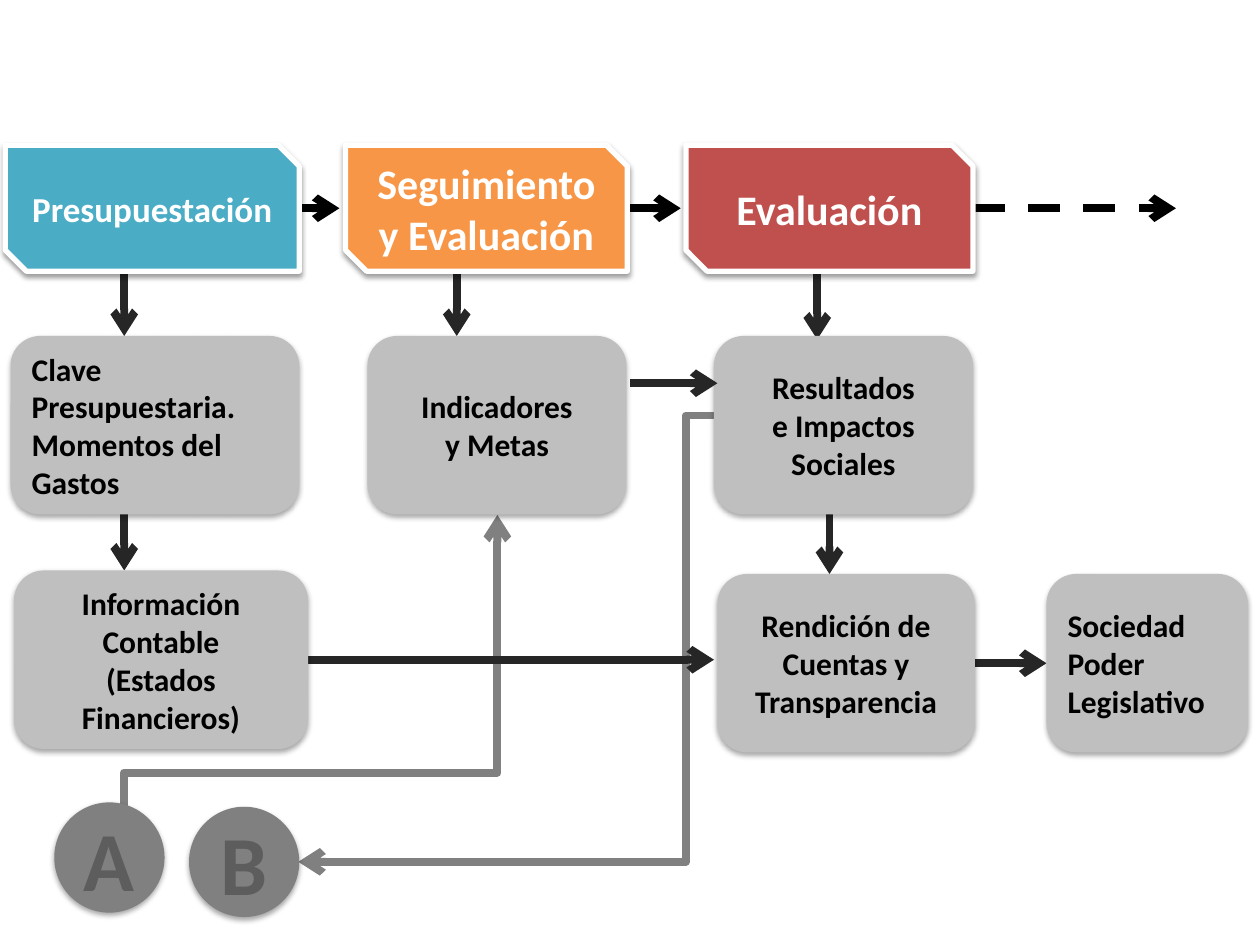
from lxml.etree import SubElement
from pptx import Presentation
from pptx.dml.color import RGBColor
from pptx.enum.dml import MSO_LINE as DASH
from pptx.enum.shapes import MSO_CONNECTOR as CONN, MSO_SHAPE as SHAPE
from pptx.enum.text import MSO_ANCHOR as ANCHOR, PP_ALIGN as ALIGN
from pptx.oxml.ns import qn
from pptx.util import Pt

COLORS = {
    "blue": "4BACC6", "orange": "F79646", "red": "C0504D", "white": "FFFFFF",
    "black": "000000", "dark": "262626", "gray": "808080", "light": "BFBFBF",
    "letter": "5D5D5D",
}

KINDS = {
    "stage": {"shape": SHAPE.SNIP_2_DIAG_RECTANGLE, "color": "white", "border": 3, "alpha": 38},
    "step": {"shape": SHAPE.ROUNDED_RECTANGLE, "color": "black", "border": 0, "alpha": 35},
    "badge": {"shape": SHAPE.OVAL, "color": "letter", "border": 0, "alpha": 35},
}
FONT = {"name": "Calibri", "bold": True}

STAGE_TOP, STAGE_H = 83, 72
STAGES = [
    (["Presupuestación"], 3, 168, "blue", 20),
    (["Seguimiento y Evaluación"], 197.5, 161, "orange", 24),
    (["Evaluación"], 392, 164, "red", 24),
]

STEP_H = 102
STEPS = {
    "key": (["Clave Presupuestaria. Momentos del Gastos"], 6, 192, 165, ALIGN.LEFT),
    "accounts": (["Información Contable", "(Estados Financieros)"], 8, 326, 168, ALIGN.CENTER),
    "goals": (["Indicadores", "y Metas"], 210, 192, 148, ALIGN.CENTER),
    "results": (["Resultados", "e Impactos Sociales"], 408, 192, 148, ALIGN.CENTER),
    "report": (["Rendición de Cuentas y Transparencia"], 410, 328, 147, ALIGN.CENTER),
    "society": (["Sociedad", "Poder Legislativo"], 598, 328, 115, ALIGN.LEFT),
}

BADGE = 63
BADGES = [("A", 31, 458.5), ("B", 108, 461)]

STAGE_MID = STAGE_TOP + STAGE_H / 2
STAGE_ARROWS = [(167, 194), (346, 389), (556, 672)]
DOWN_ARROWS = [(71, 242, 326), (474, 244, 328), (71, 107, 192), (261, 107, 192), (467, 109, 194)]


def rgb(key):
    return RGBColor.from_string(COLORS[key])


def add_arrow(kind, x1, y1, x2, y2, color):
    c = s.shapes.add_connector(kind, Pt(x1), Pt(y1), Pt(x2), Pt(y2))
    c.line.color.rgb = rgb(color)
    c.line.width = Pt(4.5)
    SubElement(c.line._get_or_add_ln(), qn("a:tailEnd"), type="arrow")
    SubElement(c._element.spPr, qn("a:effectLst"))
    return c


def add_elbow(x1, y1, x2, y2, bend, turn=0):
    c = add_arrow(CONN.ELBOW, x1, y1, x2, y2, "gray")
    geom = c._element.spPr.find(qn("a:prstGeom"))
    av = geom.find(qn("a:avLst"))
    if av is None:
        av = SubElement(geom, qn("a:avLst"))
    SubElement(av, qn("a:gd"), name="adj1", fmla=f"val {round(bend * 100000)}")
    c._element.spPr.find(qn("a:xfrm")).set("rot", str(turn * 60000))


def add_shadow(sp, alpha):
    sp.shadow.inherit = False
    effects = sp._element.spPr.find(qn("a:effectLst"))
    shadow = SubElement(effects, qn("a:outerShdw"), blurRad=str(Pt(3.1)), dist=str(Pt(1.7)),
                        dir="5400000", rotWithShape="0")
    color = SubElement(shadow, qn("a:srgbClr"), val=COLORS["black"])
    SubElement(color, qn("a:alpha"), val=str(alpha * 1000))


def add_box(kind, lines, x, y, w, h, fill, size, align=ALIGN.CENTER):
    look = KINDS[kind]
    sp = s.shapes.add_shape(look["shape"], Pt(x), Pt(y), Pt(w), Pt(h))
    sp.fill.solid()
    sp.fill.fore_color.rgb = rgb(fill)
    if look["border"]:
        sp.line.color.rgb = rgb("white")
        sp.line.width = Pt(look["border"])
    else:
        sp.line.fill.background()
    add_shadow(sp, look["alpha"])
    tf = sp.text_frame
    tf.word_wrap = True
    tf.vertical_anchor = ANCHOR.MIDDLE
    for i, text in enumerate(lines):
        p = tf.add_paragraph() if i else tf.paragraphs[0]
        p.alignment = align
        r = p.add_run()
        r.text = text
        for name, value in {**FONT, "size": Pt(size)}.items():
            setattr(r.font, name, value)
        r.font.color.rgb = rgb(look["color"])
    return sp


prs = Presentation()
prs.slide_width, prs.slide_height = Pt(720), Pt(540)
s = prs.slides.add_slide(prs.slide_layouts[6])

for x1, x2 in STAGE_ARROWS:
    c = add_arrow(CONN.STRAIGHT, x1, STAGE_MID, x2, STAGE_MID, "black")
c.line.dash_style = DASH.DASH
for x, y1, y2 in DOWN_ARROWS:
    add_arrow(CONN.STRAIGHT, x, y1, x, y2, "dark")
to_society = add_arrow(CONN.STRAIGHT, 557, 379, 598, 379, "dark")
add_elbow(522, 237.5, 170.5, 492.5, 0.37)
add_elbow(285, 508.5, 70, 295, 0.315, turn=90)
to_report = add_arrow(CONN.STRAIGHT, 176, 377, 408, 377, "dark")

for lines, x, w, fill, size in STAGES:
    add_box("stage", lines, x, STAGE_TOP, w, STAGE_H, fill, size)
boxes = {
    key: add_box("step", lines, x, y, w, STEP_H, "light", 18, align)
    for key, (lines, x, y, w, align) in STEPS.items()
}
for text, x, y in BADGES:
    add_box("badge", [text], x, y, BADGE, BADGE, "gray", 48)

add_arrow(CONN.STRAIGHT, 360, 219, 410, 219, "dark")
to_society.begin_connect(boxes["report"], 3)
to_society.end_connect(boxes["society"], 1)
to_report.begin_connect(boxes["accounts"], 3)

prs.save("out.pptx")
